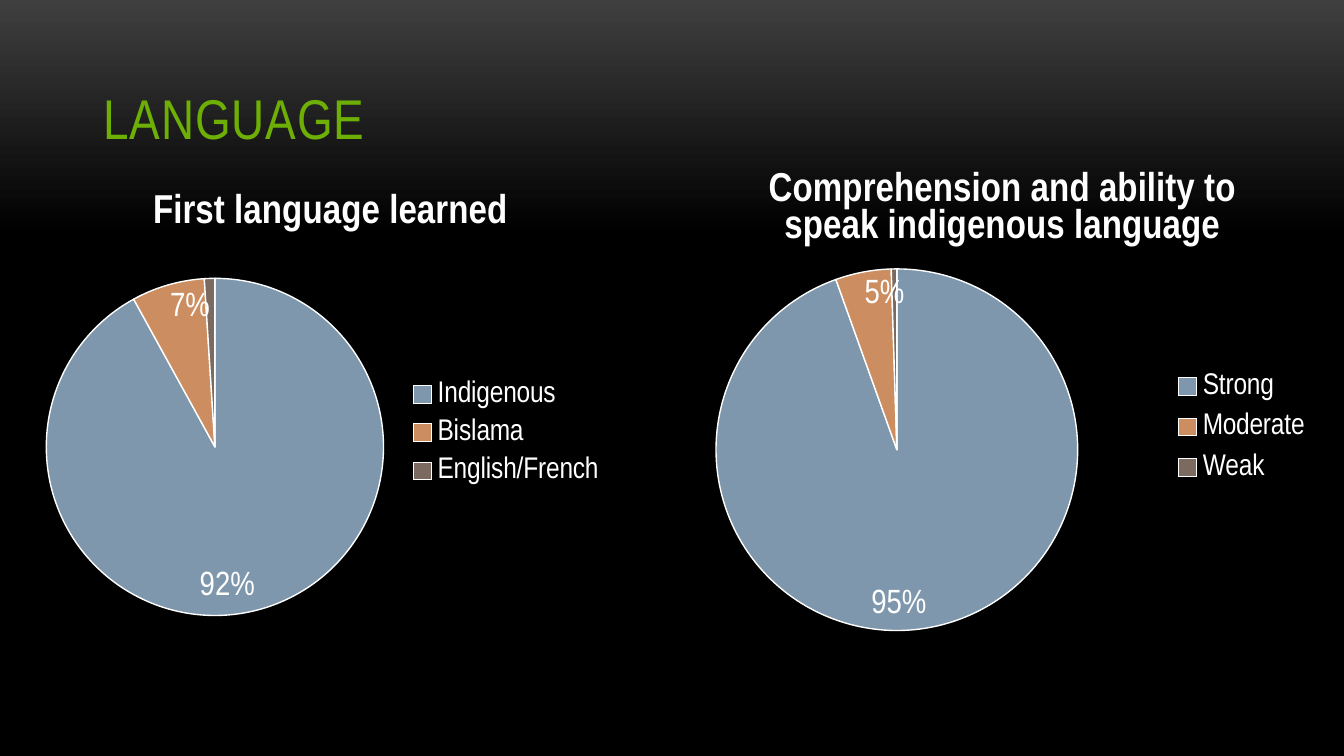
import dataclasses

import lxml.etree
import pptx
import pptx.chart.chart
import pptx.chart.data
import pptx.dml.color
import pptx.enum.chart
import pptx.enum.text
import pptx.oxml.ns
import pptx.slide
import pptx.text.text
import pptx.util

COLORS = {
    "top": "3F3F3F",
    "background": "000000",
    "heading": "6EAF05",
    "text": "FFFFFF",
}
SLICE_COLORS = {"first": "7E97AD", "second": "CC8E60", "third": "7A6A60"}
FONT = "Arial Narrow"


@dataclasses.dataclass
class Area:
    x: float
    y: float
    w: float
    h: float


@dataclasses.dataclass
class Pie:
    title: str
    categories: list[str]
    values: list[float]
    frame: Area
    plot: Area
    legend: Area


PIES = [
    Pie("First language learned", ["Indigenous", "Bislama", "English/French"], [92, 7, 1],
        Area(0, 3.12, 12.5, 8.81), Area(0.07, 0.24, 0.51, 0.73), Area(0.61, 0.44, 0.31, 0.27)),
    Pie("Comprehension and ability to speak indigenous language",
        ["Strong", "Moderate", "Weak"], [95, 5, 0.5],
        Area(12.5, 2.69, 12.9, 9.53), Area(0.08, 0.25, 0.53, 0.72), Area(0.74, 0.43, 0.22, 0.27)),
]


def rgb(code: str) -> pptx.dml.color.RGBColor:
    return pptx.dml.color.RGBColor.from_string(code)


def lengths(area: Area) -> list[int]:
    return [pptx.util.Cm(value) for value in (area.x, area.y, area.w, area.h)]


def style_font(font: pptx.text.text.Font, size: float, color: str, bold: bool = False) -> None:
    font.name = FONT
    font.size = pptx.util.Pt(size)
    font.bold = bold
    font.color.rgb = rgb(color)


def add_child(parent: lxml.etree._Element, tag: str, value: object = None) -> lxml.etree._Element:
    child = lxml.etree.SubElement(parent, pptx.oxml.ns.qn(tag))
    if value is not None:
        child.set("val", str(value))
    return child


def set_layout(parent: lxml.etree._Element, area: Area, inner: bool = False) -> None:
    for old in parent.findall(pptx.oxml.ns.qn("c:layout")):
        parent.remove(old)
    layout = add_child(parent, "c:layout")
    manual = add_child(layout, "c:manualLayout")
    if inner:
        add_child(manual, "c:layoutTarget", "inner")
    for side in ("x", "y"):
        add_child(manual, f"c:{side}Mode", "edge")
    for side, value in dataclasses.asdict(area).items():
        add_child(manual, f"c:{side}", value)
    parent.insert(0 if inner else 1, layout)


def hide_label(labels: lxml.etree._Element, index: int) -> None:
    label = add_child(labels, "c:dLbl")
    add_child(label, "c:idx", index)
    add_child(label, "c:delete", 1)
    labels.insert(0, label)


def paint_background(page: pptx.slide.Slide) -> None:
    fill = page.background.fill
    fill.gradient()
    fill.gradient_angle = 270
    for stop, name, position in zip(fill.gradient_stops, ("top", "background"), (0, 0.31)):
        stop.color.rgb = rgb(COLORS[name])
        stop.position = position


def add_heading(page: pptx.slide.Slide, text: str, area: Area) -> None:
    box = page.shapes.add_textbox(*lengths(area))
    box.text_frame.word_wrap = True
    box.text_frame.vertical_anchor = pptx.enum.text.MSO_ANCHOR.BOTTOM
    span = box.text_frame.paragraphs[0].add_run()
    span.text = text
    style_font(span.font, 30, COLORS["heading"])
    span._r.get_or_add_rPr().set("spc", "50")


def style_slices(chart: pptx.chart.chart.Chart) -> None:
    plot = chart.plots[0]
    plot.vary_by_categories = True
    series = plot.series[0]
    for index, color in enumerate(SLICE_COLORS.values()):
        style = series.points[index].format
        style.fill.solid()
        style.fill.fore_color.rgb = rgb(color)
        style.line.color.rgb = rgb(COLORS["text"])
        style.line.width = pptx.util.Pt(0.75)
    labels = series.data_labels
    labels.show_percentage = True
    labels.show_value = False
    labels.number_format = "0%"
    labels.number_format_is_linked = False
    labels.position = pptx.enum.chart.XL_LABEL_POSITION.INSIDE_END
    style_font(labels.font, 18, COLORS["text"])
    hide_label(labels._element, len(SLICE_COLORS) - 1)


def add_pie(page: pptx.slide.Slide, pie: Pie) -> None:
    data = pptx.chart.data.CategoryChartData()
    data.categories = pie.categories
    data.add_series("Series 1", pie.values)
    chart = page.shapes.add_chart(
        pptx.enum.chart.XL_CHART_TYPE.PIE, *lengths(pie.frame), data).chart
    style_font(chart.font, 18, COLORS["text"])
    chart.has_title = True
    span = chart.chart_title.text_frame.paragraphs[0].add_run()
    span.text = pie.title
    style_font(span.font, 21.6, COLORS["text"], bold=True)
    chart.chart_title.include_in_layout = False
    style_slices(chart)
    chart.has_legend = True
    chart.legend.position = pptx.enum.chart.XL_LEGEND_POSITION.RIGHT
    chart.legend.include_in_layout = False
    style_font(chart.legend.font, 16, COLORS["text"])
    set_layout(chart.legend._element, pie.legend)
    set_layout(chart._chartSpace.chart.plotArea, pie.plot, inner=True)


def main() -> None:
    deck = pptx.Presentation()
    deck.slide_width = pptx.util.Cm(25.4)
    deck.slide_height = pptx.util.Cm(14.29)
    page = deck.slides.add_slide(deck.slide_layouts[6])
    paint_background(page)
    add_heading(page, "LANGUAGE", Area(1.7, 0.58, 22.02, 2.39))
    for pie in PIES:
        add_pie(page, pie)
    deck.save("out.pptx")


if __name__ == "__main__":
    main()
